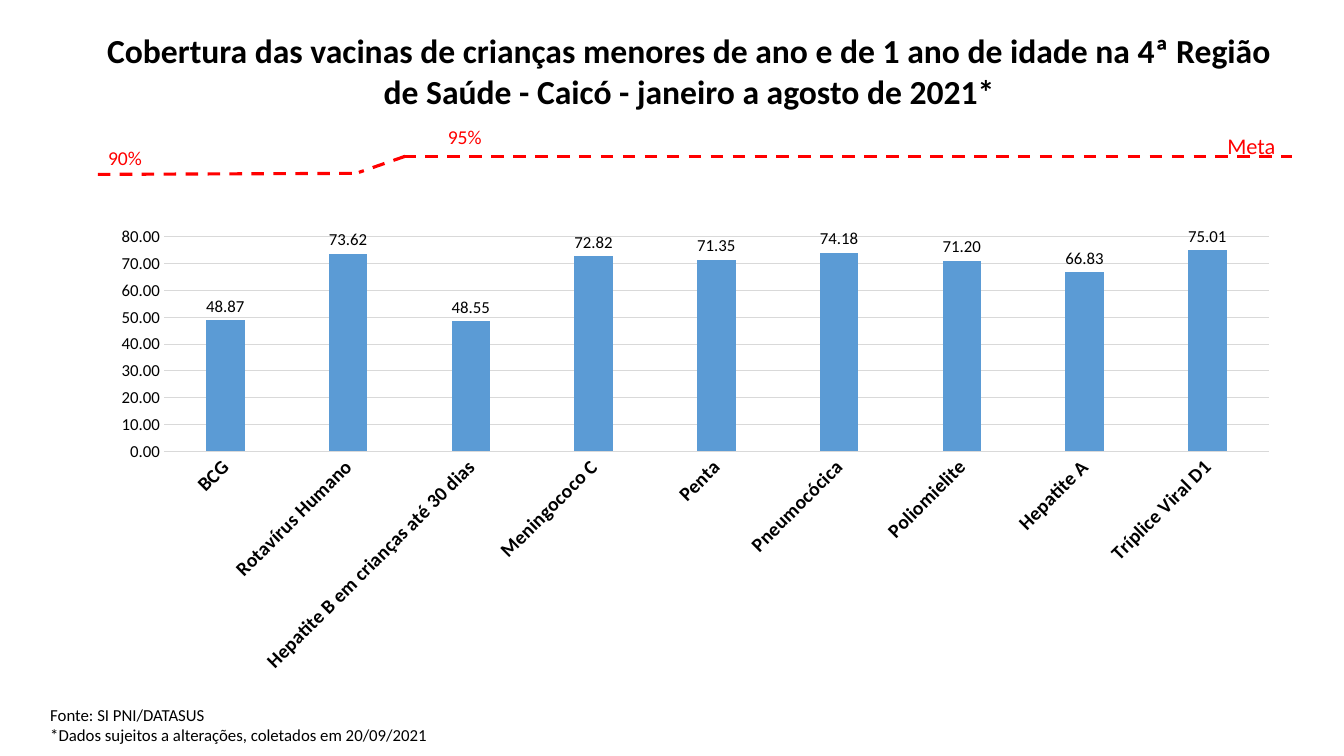
from lxml.etree import SubElement
from pptx import Presentation
from pptx.chart.data import CategoryChartData
from pptx.dml.color import RGBColor
from pptx.enum.chart import XL_CHART_TYPE, XL_LABEL_POSITION, XL_TICK_MARK
from pptx.enum.dml import MSO_LINE
from pptx.enum.text import MSO_ANCHOR, MSO_AUTO_SIZE, PP_ALIGN
from pptx.oxml.ns import qn
from pptx.util import Inches, Pt

FONT = "Calibri"
COLORS = {"text": "000000", "goal": "FF0000", "bar": "5B9BD5", "grid": "D9D9D9"}
RATES = {
    "BCG": 48.87,
    "Rotavírus Humano": 73.62,
    "Hepatite B em crianças até 30 dias": 48.55,
    "Meningococo C": 72.82,
    "Penta": 71.35,
    "Pneumocócica": 74.18,
    "Poliomielite": 71.2,
    "Hepatite A": 66.83,
    "Tríplice Viral D1": 75.01,
}
TITLE = (
    "Cobertura das vacinas de crianças menores de ano e de 1 ano de idade "
    "na 4ª Região de Saúde - Caicó - janeiro a agosto de 2021*"
)
NOTES = ["Fonte: SI PNI/DATASUS", "*Dados sujeitos a alterações, coletados em 20/09/2021"]
GOALS = [
    ("90%", (0.97, 1.4, 0.54, 0.34), 14),
    ("95%", (4.34, 1.19, 0.54, 0.34), 14),
    ("Meta", (12.07, 1.26, 0.68, 0.37), 16),
]
STEPS = [
    ((0.97, 1.73), (3.53, 1.72)),
    ((4.02, 1.55), (3.56, 1.71)),
    ((4, 1.55), (12.81, 1.55)),
]


def color(name):
    return RGBColor.from_string(COLORS[name])


def style(font, size, tone="text", bold=False):
    font.name = FONT
    font.size = Pt(size)
    font.bold = bold
    font.color.rgb = color(tone)


def write(shape, lines, size, tone="text", bold=False, align=PP_ALIGN.LEFT, wrap=True):
    frame = shape.text_frame
    frame.word_wrap = wrap
    frame.auto_size = MSO_AUTO_SIZE.NONE
    frame.vertical_anchor = MSO_ANCHOR.TOP
    for i, line in enumerate(lines):
        para = frame.paragraphs[0] if i == 0 else frame.add_paragraph()
        para.alignment = align
        para.line_spacing = 1.0
        para.space_before = Pt(0)
        run = para.add_run()
        run.text = line
        style(run.font, size, tone, bold)


def add_title(slide):
    title = slide.shapes.title
    title.left, title.top = Inches(0.91), Inches(0.25)
    title.width, title.height = Inches(11.85), Inches(0.91)
    write(title, [TITLE], 24, bold=True, align=PP_ALIGN.CENTER)


def add_text(slide, box, lines, size, **kind):
    shape = slide.shapes.add_textbox(*map(Inches, box))
    write(shape, lines, size, **kind)


def add_dash(group, start, end):
    ends = map(Inches, start + end)
    line = group.shapes.add_connector(1, *ends)
    line.line.color.rgb = color("goal")
    line.line.width = Pt(2.25)
    line.line.dash_style = MSO_LINE.DASH
    SubElement(line._element.spPr, qn("a:effectLst"))


def rule(line):
    line.color.rgb = color("grid")
    line.width = Pt(0.75)


def add_bars(slide):
    data = CategoryChartData(number_format="0.00")
    data.categories = list(RATES)
    data.add_series("Cobertura", list(RATES.values()))
    box = map(Inches, (0.97, 2.16, 11.85, 4.61))
    chart = slide.shapes.add_chart(XL_CHART_TYPE.COLUMN_CLUSTERED, *box, data).chart
    chart.has_title = False
    chart.has_legend = False
    style(chart.font, 12)

    plot = chart.plots[0]
    plot.gap_width = 219
    plot.overlap = -27
    plot.vary_by_categories = False
    fill = plot.series[0].format.fill
    fill.solid()
    fill.fore_color.rgb = color("bar")
    plot.has_data_labels = True
    labels = plot.data_labels
    labels.show_value = True
    labels.position = XL_LABEL_POSITION.OUTSIDE_END
    labels.number_format = "0.00"
    labels.number_format_is_linked = False
    style(labels.font, 12)

    names, scale = chart.category_axis, chart.value_axis
    for axis in (names, scale):
        axis.major_tick_mark = XL_TICK_MARK.NONE
        axis.minor_tick_mark = XL_TICK_MARK.NONE
    style(names.tick_labels.font, 14, bold=True)
    names._element.txPr.find(qn("a:bodyPr")).set("rot", "-2700000")
    rule(names.format.line)

    style(scale.tick_labels.font, 12)
    scale.tick_labels.number_format = "0.00"
    scale.tick_labels.number_format_is_linked = False
    scale.minimum_scale = 0
    scale.maximum_scale = 80
    scale.major_unit = 10
    scale.format.line.fill.background()
    rule(scale.major_gridlines.format.line)


def main():
    deck = Presentation()
    deck.slide_width, deck.slide_height = Inches(13.33), Inches(7.5)
    slide = deck.slides.add_slide(deck.slide_layouts[5])
    add_title(slide)
    add_text(slide, (0.4, 6.94, 6.96, 0.5), NOTES, 12)
    group = slide.shapes.add_group_shape()
    for start, end in STEPS:
        add_dash(group, start, end)
    add_bars(slide)
    for text, box, size in GOALS:
        add_text(slide, box, [text], size, tone="goal", align=PP_ALIGN.CENTER, wrap=False)
    deck.save("out.pptx")


if __name__ == "__main__":
    main()
